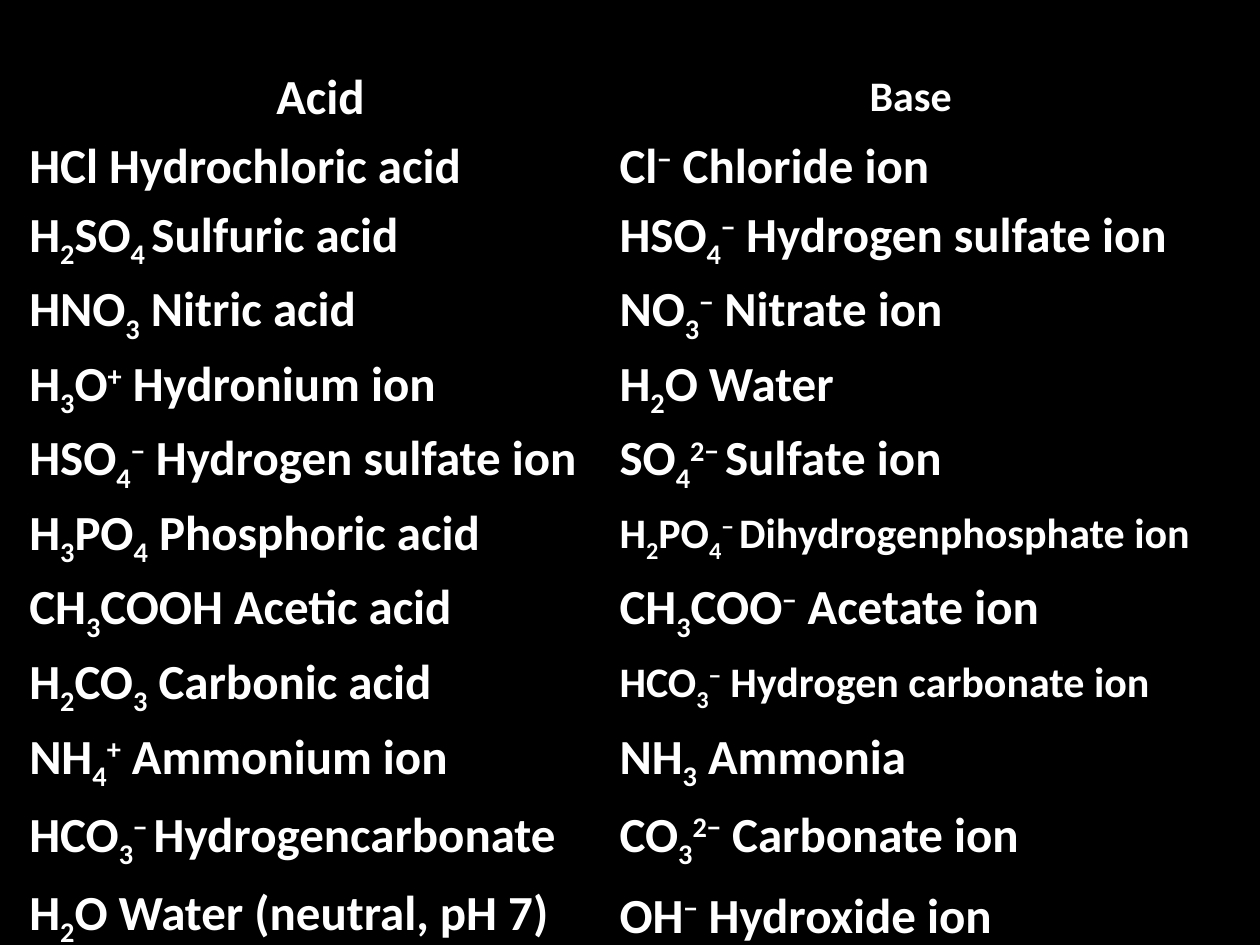
import pptx
import pptx.dml.color
import pptx.enum.text
import pptx.util

Cm, Pt = pptx.util.Cm, pptx.util.Pt
RGB = pptx.dml.color.RGBColor.from_string
PP_ALIGN = pptx.enum.text.PP_ALIGN
COLORS = {"background": "000000", "text": "FFFFFF"}
NO_STYLE_NO_GRID = "{2D5ABB26-0587-4C30-8999-92F81FD0307C}"
SIZE, SMALL = 28, 24
BASELINES = {"_": "-25000", "^": "30000"}

# Runs are separated by "|"; a leading "_" lowers a run and "^" raises it.
ROWS = [
    ("Acid", "Base"),
    ("HCl Hydrochloric acid", "Cl|^−| Chloride ion"),
    ("H|_2|SO|_4 |Sulfuric acid", "HSO|_4|^−| Hydrogen sulfate ion"),
    ("HNO|_3| Nitric acid", "NO|_3|^−| Nitrate ion"),
    ("H|_3|O|^+| Hydronium ion", "H|_2|O Water"),
    ("HSO|_4|^−| Hydrogen sulfate ion", "SO|_4|^2− |Sulfate ion"),
    ("H|_3|PO|_4| Phosphoric acid", "H|_2|PO|_4|^− |Dihydrogenphosphate ion"),
    ("CH|_3|COOH Acetic acid", "CH|_3|COO|^−| Acetate ion"),
    ("H|_2|CO|_3| Carbonic acid", "HCO|_3|^−| Hydrogen carbonate ion"),
    ("NH|_4|^+| Ammonium ion", "NH|_3| Ammonia"),
    ("HCO|_3|^− |Hydrogencarbonate", "CO|_3|^2−| Carbonate ion"),
    ("H|_2|O Water (neutral, pH 7)", "OH|^−| Hydroxide ion"),
]
SMALL_BASE_ROWS = {0, 6, 8}
TALL_ROW = 10


def add_formula(p, formula, size):
    """Add the runs of a formula, with its subscripts and superscripts."""
    for part in formula.split("|"):
        baseline = BASELINES.get(part[0])
        r = p.add_run()
        r.text = part[1:] if baseline else part
        r.font.name = "Calibri"
        r.font.size = Pt(size)
        r.font.bold = True
        r.font.color.rgb = RGB(COLORS["text"])
        if baseline:
            r.font._element.set("baseline", baseline)


prs = pptx.Presentation()
prs.slide_width, prs.slide_height = Cm(25.4), Cm(19.05)
s = prs.slides.add_slide(prs.slide_layouts[6])
s.background.fill.solid()
s.background.fill.fore_color.rgb = RGB(COLORS["background"])

frame = s.shapes.add_table(len(ROWS), 2, Cm(0.51), Cm(1.27), Cm(23.8), Cm(17.05))
table = frame.table
table.first_row = table.horz_banding = False
table._tbl.tblPr[0].text = NO_STYLE_NO_GRID

for i, formulas in enumerate(ROWS):
    table.rows[i].height = Cm(1.65 if i == TALL_ROW else 1.4)
    for j, formula in enumerate(formulas):
        cell = table.cell(i, j)
        cell.fill.background()
        cell.vertical_anchor = pptx.enum.text.MSO_ANCHOR.MIDDLE
        cell.margin_left = cell.margin_right = Cm(0.08)
        cell.margin_top = cell.margin_bottom = Cm(0.08)
        p = cell.text_frame.paragraphs[0]
        p.alignment = PP_ALIGN.CENTER if i == 0 else PP_ALIGN.LEFT
        add_formula(p, formula, SMALL if j == 1 and i in SMALL_BASE_ROWS else SIZE)

prs.save("out.pptx")
